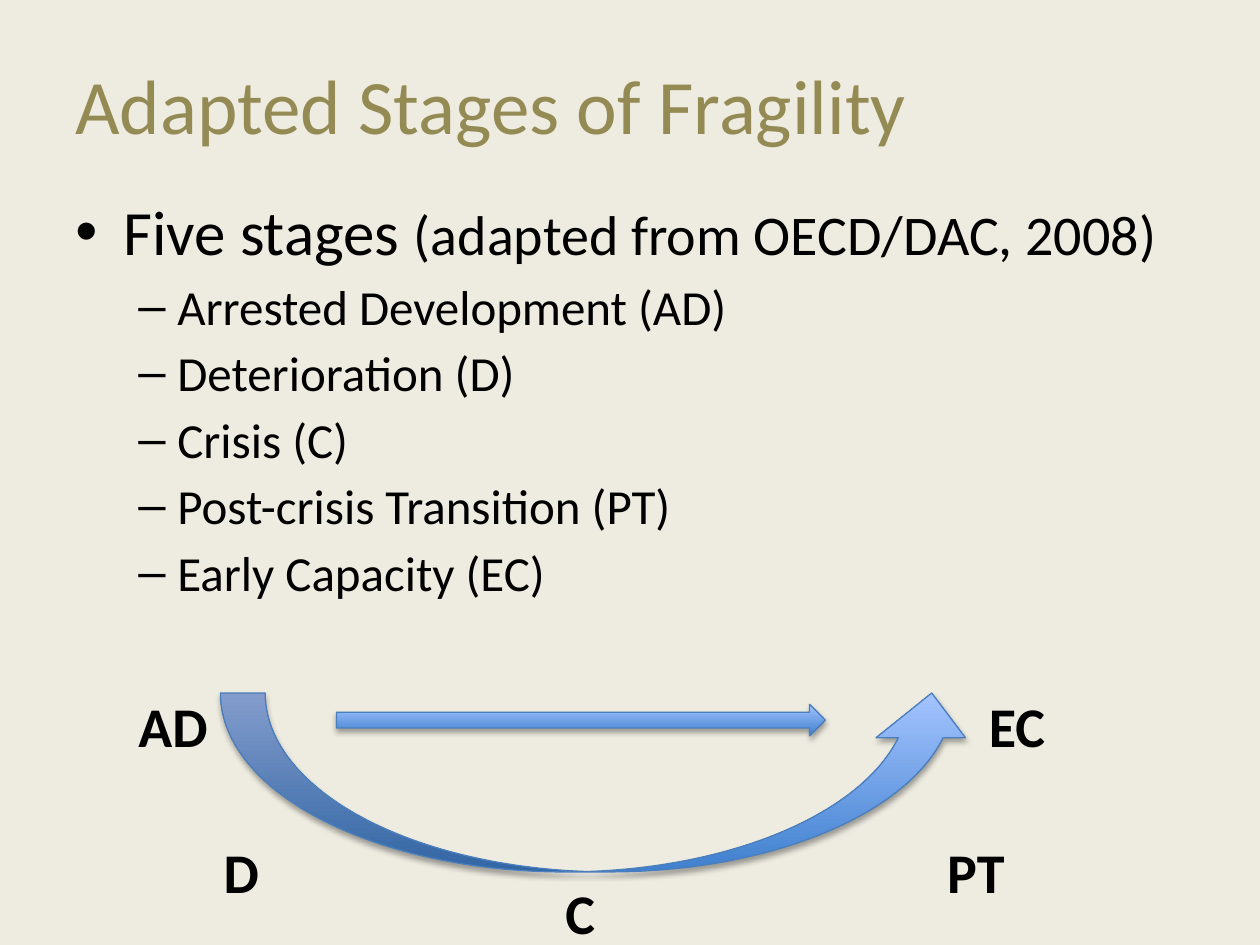
from lxml import etree
from pptx import Presentation
from pptx import util as u
from pptx.dml import color
from pptx.enum import shapes, text
from pptx.oxml import ns

WIDTH, HEIGHT = 10, 7.5
MARGIN = 0.05 * WIDTH
COLOURS = {"paper": "EEECE1", "title": "948A54", "ink": "000000",
           "deep": "3F80CE", "light": "A4C4FF", "edge": "4B7EBC"}
FONT = "Calibri"
BULLETS = {  # level: mark, left indent, hanging indent, line spacing, space before
    0: ("•", 0.38, -0.38, 34, 14),
    1: ("–", 0.81, -0.31, 30, 8),
}
STAGES = ["Arrested Development (AD)", "Deterioration (D)", "Crisis (C)",
          "Post-crisis Transition (PT)", "Early Capacity (EC)"]
# Labels around the arrows: text, left, top, alignment
LABELS = [("AD", 1, 5.44, "LEFT"), ("EC", 7.75, 5.44, "LEFT"),
          ("D", 1.54, 6.6, "CENTER"), ("PT", 7.37, 6.6, "CENTER"),
          ("C", 4.23, 6.92, "CENTER")]


def rgb(name):
    return color.RGBColor.from_string(COLOURS[name])


def set_all(target, **values):
    for name, value in values.items():
        setattr(target, name, value)


def add_box(page, left, top, width, height, anchor="TOP"):
    box = page.shapes.add_textbox(*map(u.Inches, (left, top, width, height)))
    set_all(box.text_frame, word_wrap=True,
            vertical_anchor=getattr(text.MSO_ANCHOR, anchor))
    return box.text_frame


def add_span(para, words, size, ink="ink", bold=False):
    span = para.add_run()
    span.text = words
    set_all(span.font, name=FONT, size=u.Pt(size), bold=bold)
    span.font.color.rgb = rgb(ink)


def format_bullet(para, level):
    mark, left, hanging, spacing, before = BULLETS[level]
    set_all(para, level=level, line_spacing=u.Pt(spacing), space_before=u.Pt(before))
    properties = para._p.get_or_add_pPr()
    properties.set("marL", str(u.Inches(left)))
    properties.set("indent", str(u.Inches(hanging)))
    etree.SubElement(properties, ns.qn("a:buFont"), typeface="Arial")
    etree.SubElement(properties, ns.qn("a:buChar"), char=mark)


def add_arrow(page, kind, left, top, width, height):
    arrow = page.shapes.add_shape(kind, *map(u.Inches, (left, top, width, height)))
    arrow.fill.gradient()
    arrow.fill.gradient_angle = 90
    for stop, position, name in zip(arrow.fill.gradient_stops, (0, 1), ("deep", "light")):
        stop.position = position
        stop.color.rgb = rgb(name)
    arrow.line.color.rgb = rgb("edge")
    arrow.line.width = u.Pt(0.75)
    # Soft shadow straight below
    arrow.shadow.inherit = False
    effects = arrow._element.spPr.find(ns.qn("a:effectLst"))
    shadow = etree.SubElement(effects, ns.qn("a:outerShdw"), blurRad=str(u.Pt(3.1)),
                              dist=str(u.Pt(1.8)), dir="5400000", rotWithShape="0")
    tint = etree.SubElement(shadow, ns.qn("a:srgbClr"), val=COLOURS["ink"])
    etree.SubElement(tint, ns.qn("a:alpha"), val="35000")


def add_title(page):
    para = add_box(page, MARGIN, 0.3, WIDTH - 2 * MARGIN, 1.25, "MIDDLE").paragraphs[0]
    para.line_spacing = u.Pt(38)
    add_span(para, "Adapted Stages of Fragility", 44, "title")


def add_stages(page):
    frame = add_box(page, MARGIN, 1.61, WIDTH - 2 * MARGIN, 5.56)
    para = frame.paragraphs[0]
    format_bullet(para, 0)
    add_span(para, "Five stages ", 36)
    add_span(para, "(adapted from OECD/DAC, 2008)", 32)
    for stage in STAGES:
        para = frame.add_paragraph()
        format_bullet(para, 1)
        add_span(para, stage, 28)


def add_label(page, words, left, top, alignment):
    para = add_box(page, left, top, 0.75, 0.64).paragraphs[0]
    para.alignment = getattr(text.PP_ALIGN, alignment)
    add_span(para, words, 32, bold=True)


def main():
    deck = Presentation()
    set_all(deck, slide_width=u.Inches(WIDTH), slide_height=u.Inches(HEIGHT))
    page = deck.slides.add_slide(deck.slide_layouts[6])
    page.background.fill.solid()
    page.background.fill.fore_color.rgb = rgb("paper")

    # Heading and list
    add_title(page)
    add_stages(page)

    # Paths between the stages
    add_arrow(page, shapes.MSO_SHAPE.CURVED_UP_ARROW, 1.75, 5.5, 6, 1.42)
    add_arrow(page, shapes.MSO_SHAPE.RIGHT_ARROW, 2.67, 5.59, 3.88, 0.25)
    for label in LABELS:
        add_label(page, *label)

    deck.save("out.pptx")


if __name__ == "__main__":
    main()
